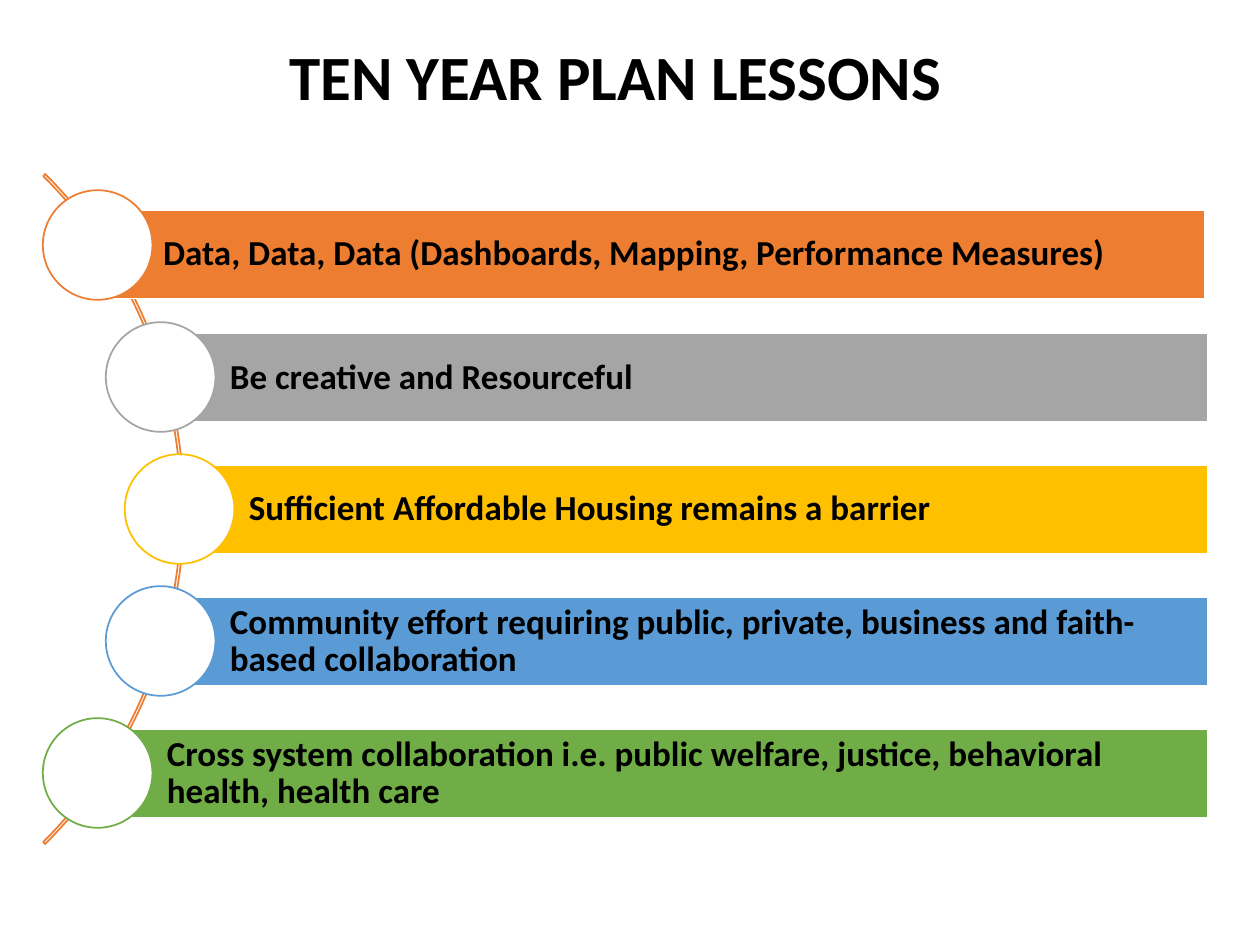
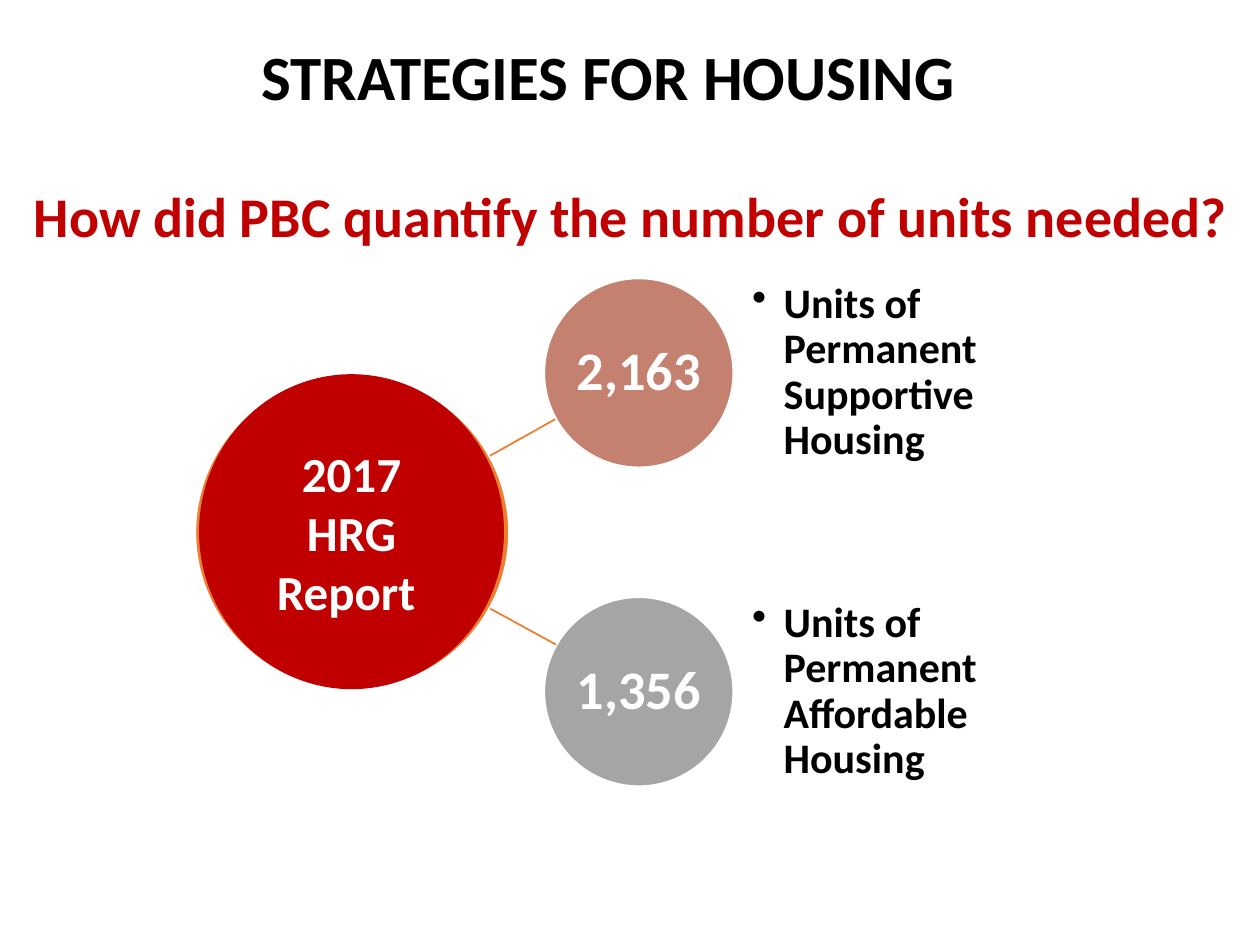
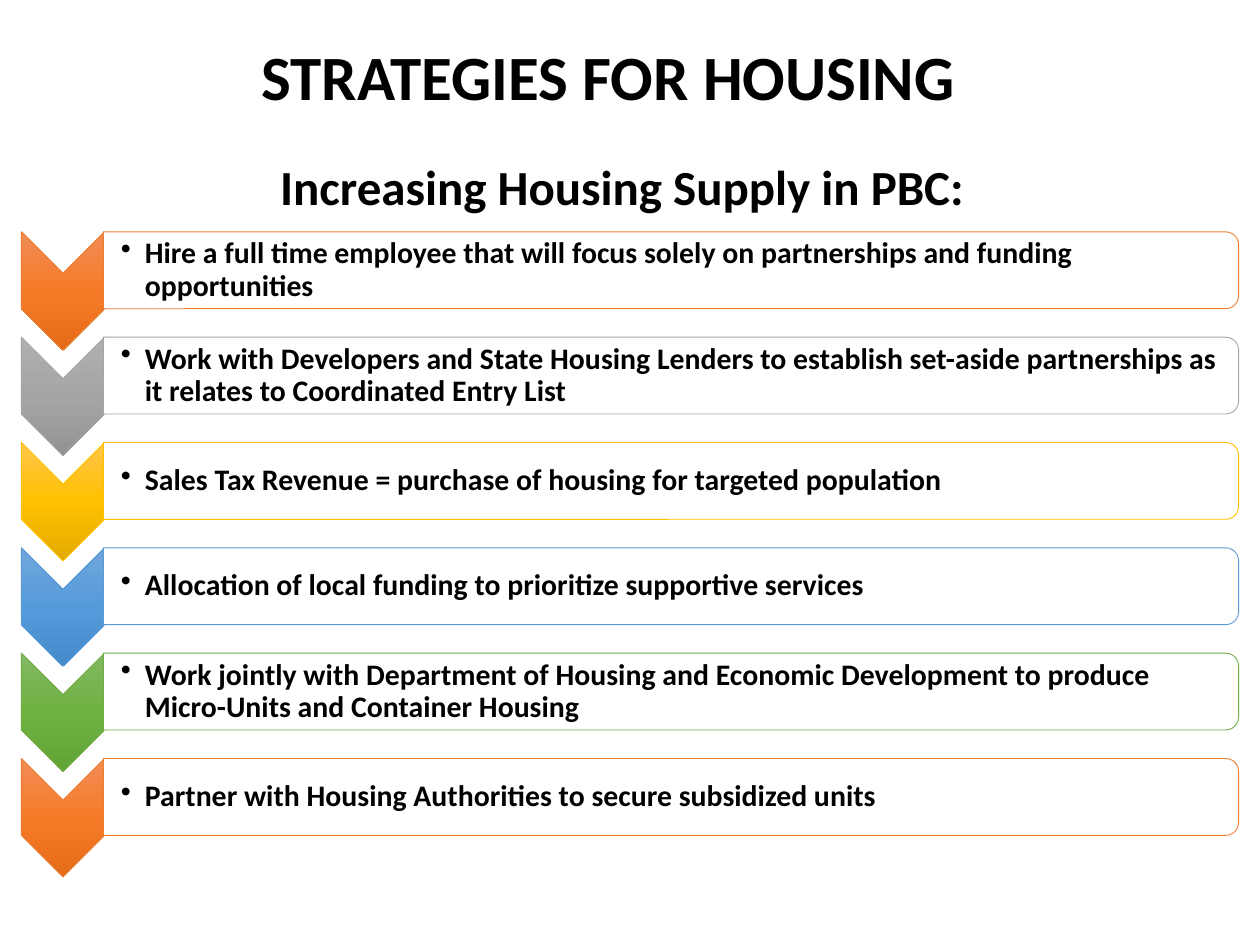
from pptx import Presentation
from pptx.dml.color import RGBColor
from pptx.enum.shapes import MSO_AUTO_SHAPE_TYPE as Preset, MSO_CONNECTOR_TYPE as Connector
from pptx.enum.text import MSO_VERTICAL_ANCHOR as Anchor, PP_PARAGRAPH_ALIGNMENT as Align
from pptx.oxml import parse_xml
from pptx.oxml.ns import nsdecls, qn
from pptx.util import Inches, Pt

FONT = "Calibri"
BLACK, WHITE, RED, ROSE = "000000", "FFFFFF", "C00000", "C48170"
ORANGE, GRAY, GOLD, BLUE, GREEN = "ED7D31", "A5A5A5", "FFC000", "5B9BD5", "70AD47"
ACCENTS = [ORANGE, GRAY, GOLD, BLUE, GREEN]
GRADIENTS = {
    ORANGE: ("F18C57", "F67B28", "E56C19"),
    GRAY: ("AFAFAF", "A5A5A5", "939393"),
    GOLD: ("FFC64B", "FFC000", "E3AB00"),
    BLUE: ("71A6DB", "559BDB", "448ACA"),
    GREEN: ("81B861", "6FB242", "62A336"),
}


def color(value):
    return RGBColor.from_string(value)


def write(shape, text, size=20, ink=BLACK, align=Align.LEFT, anchor=Anchor.MIDDLE,
          insets=(0.1, 0.05, 0.1, 0.05), spacing=None, bullet_indent=None):
    frame = shape.text_frame
    frame.word_wrap = True
    frame.vertical_anchor = anchor
    (frame.margin_left, frame.margin_top,
     frame.margin_right, frame.margin_bottom) = map(Inches, insets)
    for index, line in enumerate(text.split("\n")):
        paragraph = frame.add_paragraph() if index else frame.paragraphs[0]
        paragraph.alignment = align
        paragraph.line_spacing = spacing
        run = paragraph.add_run()
        run.text = line
        run.font.name = FONT
        run.font.size = Pt(size)
        run.font.bold = True
        run.font.color.rgb = color(ink)
        if bullet_indent:
            properties = paragraph._p.get_or_add_pPr()
            properties.set("marL", str(Inches(bullet_indent)))
            properties.set("indent", str(-Inches(bullet_indent)))
            properties.append(parse_xml(f'<a:buChar {nsdecls("a")} char="•"/>'))


class Deck:
    def __init__(self):
        self.presentation = Presentation()
        self.presentation.slide_width = Inches(10)
        self.presentation.slide_height = Inches(7.5)
        self.slide = None

    def new_slide(self, title):
        self.slide = self.presentation.slides.add_slide(self.presentation.slide_layouts[6])
        self.text(title, 0.67, 0.25, 8.43, 0.71, size=36, align=Align.CENTER, anchor=Anchor.TOP)

    def text(self, text, left, top, width, height, **text_format):
        box = self.slide.shapes.add_textbox(*map(Inches, (left, top, width, height)))
        write(box, text, **text_format)

    def shape(self, preset, left, top, width, height, fill=None, outline=None, weight=1):
        shape = self.slide.shapes.add_shape(preset, *map(Inches, (left, top, width, height)))
        shape.shadow.inherit = False
        if fill:
            shape.fill.solid()
            shape.fill.fore_color.rgb = color(fill)
        else:
            shape.fill.background()
        if outline:
            shape.line.color.rgb = color(outline)
            shape.line.width = Pt(weight)
        else:
            shape.line.fill.background()
        return shape

    def turned(self, preset, left, top, width, height, **style):
        shift = (width - height) / 2
        shape = self.shape(preset, left + shift, top - shift, height, width, **style)
        shape.rotation = 90
        return shape

    def chevron(self, left, top, width, height, accent):
        shape = self.turned(Preset.CHEVRON, left, top, width, height, outline=accent, weight=0.5)
        stops = "".join(
            f'<a:gs pos="{index * 50000}"><a:srgbClr val="{value}"/></a:gs>'
            for index, value in enumerate(GRADIENTS[accent]))
        properties = shape._element.spPr
        properties.replace(properties.find(qn("a:noFill")), parse_xml(
            f'<a:gradFill {nsdecls("a")} rotWithShape="0"><a:gsLst>{stops}</a:gsLst>'
            '<a:lin ang="5400000" scaled="0"/></a:gradFill>'))

    def line(self, start, end, ink):
        connector = self.slide.shapes.add_connector(
            Connector.STRAIGHT, *map(Inches, (*start, *end)))
        connector.line.color.rgb = color(ink)
        connector.line.width = Pt(1)
        connector._element.spPr.append(parse_xml(f'<a:effectLst {nsdecls("a")}/>'))


def add_lessons(deck):
    deck.new_slide("TEN YEAR PLAN LESSONS")
    arc = deck.shape(Preset.BLOCK_ARC, -6.06, 0.28, 7.52, 7.52, outline=ORANGE)
    for index, value in enumerate((189, 27, 3 / 1000)):
        arc.adjustments[index] = value

    lessons = [
        "Data, Data, Data (Dashboards, Mapping, Performance Measures)",
        "Be creative and Resourceful",
        "Sufficient Affordable Housing remains a barrier",
        "Community effort requiring public, private, business and faith-based collaboration",
        "Cross system collaboration i.e. public welfare, justice, behavioral health, health care",
    ]
    circle_lefts = [0.34, 0.84, 0.99, 0.84, 0.34]
    nudges = [(-0.03, 0.07)] + [(0, 0)] * 4
    diameter, pitch, bars_right = 0.87, 4.19 / 4, 9.59
    for index, (lesson, left, nudge, accent) in enumerate(
            zip(lessons, circle_lefts, nudges, ACCENTS)):
        top = 1.51 + index * pitch
        bar_left = left + diameter / 2
        bar = deck.shape(Preset.RECTANGLE, bar_left + nudge[0], top + 0.09 + nudge[1],
                         bars_right - bar_left, 0.7, fill=accent, outline=WHITE)
        write(bar, lesson, insets=(0.55, 0.06, 0.06, 0.06), spacing=0.9)
        deck.shape(Preset.OVAL, left, top, diameter, diameter, fill=WHITE, outline=accent)


def add_units_needed(deck):
    deck.new_slide("STRATEGIES FOR HOUSING ")
    deck.line((3.67, 4.71), (4.42, 5.12), ORANGE)
    deck.line((3.67, 3.74), (4.42, 3.32), ORANGE)
    deck.shape(Preset.OVAL, 1.55, 2.98, 2.49, 2.49, fill=ORANGE, outline=WHITE)
    for top, fill, count, kind in ((2.21, ROSE, "2,163", "Supportive"),
                                   (4.74, GRAY, "1,356", "Affordable")):
        circle = deck.shape(Preset.OVAL, 4.32, top, 1.5, 1.5, fill=fill, outline=WHITE)
        write(circle, count, size=31, ink=WHITE, align=Align.CENTER,
              insets=[0.02] * 4, spacing=0.9)
        deck.text(f"Units of Permanent {kind} Housing", 5.97, top, 2.24, 1.5,
                  size=24, insets=[0] * 4, spacing=0.9, bullet_indent=0.25)
    report = deck.shape(Preset.OVAL, 1.58, 2.97, 2.42, 2.5, fill=RED)
    write(report, "2017\nHRG Report ", size=28, ink=WHITE, align=Align.CENTER)
    deck.text("How did PBC quantify the number of units needed?", 0.17, 1.39, 9.75, 0.64,
              size=32, ink=RED, anchor=Anchor.TOP)


def add_housing_supply(deck):
    deck.new_slide("STRATEGIES FOR HOUSING ")
    actions = [
        "Hire a full time employee that will focus solely on partnerships and funding opportunities",
        "Work with Developers and State Housing Lenders to establish set-aside partnerships "
        "as it relates to Coordinated Entry List",
        "Sales Tax Revenue = purchase of housing for targeted population",
        "Allocation of local funding to prioritize supportive services",
        "Work jointly with Department of Housing and Economic Development to produce "
        "Micro-Units and Container Housing",
        "Partner with Housing Authorities to secure subsidized units",
    ]
    pitch = 4.18 / 5
    for index, action in enumerate(actions):
        top = 1.84 + index * pitch
        accent = ACCENTS[index % len(ACCENTS)]
        deck.chevron(0.17, top, 0.66, 0.94, accent)
        deck.turned(Preset.ROUND_2_SAME_RECTANGLE, 0.82, top, 9.01, 0.61,
                    fill=WHITE, outline=accent, weight=0.5)
        deck.text(action, 0.83, top + 0.03, 8.98, 0.55, size=17,
                  insets=(0.13, 0.01, 0.01, 0.01), spacing=0.9, bullet_indent=0.19)
    deck.text("Increasing Housing Supply in PBC:", 0.04, 1.19, 9.79, 1.04,
              size=28, align=Align.CENTER, anchor=Anchor.TOP)


def main():
    deck = Deck()
    add_lessons(deck)
    add_units_needed(deck)
    add_housing_supply(deck)
    deck.presentation.save("out.pptx")


if __name__ == "__main__":
    main()
